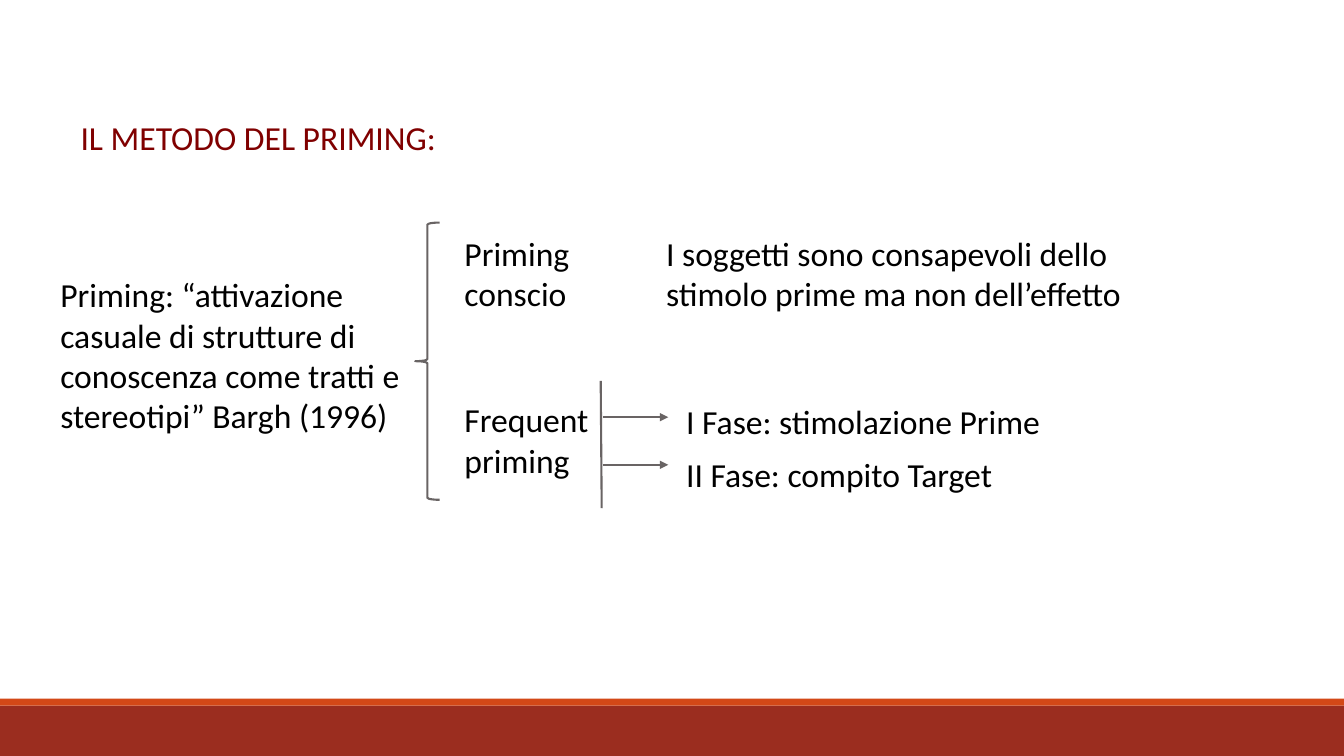
from lxml import etree
from pptx import Presentation
from pptx.dml.color import RGBColor
from pptx.enum import shapes as sh, text as tx
from pptx.oxml import ns
from pptx.util import Pt

HUES = {"band": "9B2D1F", "strip": "D34817", "line": "696464",
        "body": "000000", "title": "800000"}

deck = Presentation()
deck.slide_width, deck.slide_height = Pt(960), Pt(540)
slide = deck.slides.add_slide(deck.slide_layouts[6])
items = slide.shapes


def hue(name):
    return RGBColor.from_string(HUES[name])


def write(words, left, top, width, height, color="body", pad=7.2, align=None, indent=0):
    frame = items.add_textbox(Pt(left), Pt(top), Pt(width), Pt(height)).text_frame
    frame.word_wrap = True
    frame.margin_left = frame.margin_right = Pt(7.2)
    frame.margin_top = frame.margin_bottom = Pt(pad)
    par = frame.paragraphs[0]
    par.alignment = align
    if indent:
        par._p.get_or_add_pPr().set("marL", str(Pt(indent)))
    run = par.add_run()
    run.text = words
    run.font.name, run.font.size = "Calibri", Pt(24)
    run.font.color.rgb = hue(color)


# Footer bands
for name, top, height in [("band", 504, 36), ("strip", 499, 5)]:
    bar = items.add_shape(sh.MSO_SHAPE.RECTANGLE, 0, Pt(top), Pt(960), Pt(height))
    bar.shadow.inherit = False
    bar.fill.solid()
    bar.fill.fore_color.rgb = hue(name)
    bar.line.fill.background()

# Title and definition
write("IL METODO DEL PRIMING:", 8, 80, 842, 36, color="title", pad=3.6,
      align=tx.PP_ALIGN.JUSTIFY, indent=42.5)
write("Priming: “attivazione casuale di strutture di conoscenza come tratti e "
      "stereotipi” Bargh (1996)", 36, 188.6, 260.6, 59)

# Brace over the two kinds of priming
brace = items.add_shape(sh.MSO_SHAPE.LEFT_BRACE, Pt(296.6), Pt(159), Pt(17.4), Pt(198))
brace.shadow.inherit = False
brace.adjustments[0] = 0.083
brace.fill.background()
brace.line.color.rgb = hue("line")
brace.line.width = Pt(1.5)

# Kinds of priming and their details
write("Priming conscio", 324.7, 159, 155, 29.5)
write("I soggetti sono consapevoli dello stimolo prime ma non dell’effetto",
      468.7, 159, 397.5, 46)
write("Frequent priming", 324.7, 278, 144, 29.5)
write("I Fase: stimolazione Prime", 483, 279.4, 332.6, 19)
write("II Fase: compito Target", 483, 317, 237.6, 21)

# Divider and the arrows to the two phases
for x1, y1, x2, y2, arrow in [(429.1, 272, 429.8, 363, False),
                              (430.6, 298, 477.4, 298, True),
                              (430.6, 332, 477.4, 332, True)]:
    link = items.add_connector(sh.MSO_CONNECTOR.STRAIGHT, Pt(x1), Pt(y1), Pt(x2), Pt(y2))
    link.line.color.rgb = hue("line")
    link.line.width = Pt(1.5)
    if arrow:
        etree.SubElement(link.line._get_or_add_ln(), ns.qn("a:tailEnd"), type="triangle")
    etree.SubElement(link._element.spPr, ns.qn("a:effectLst"))

deck.save("out.pptx")
